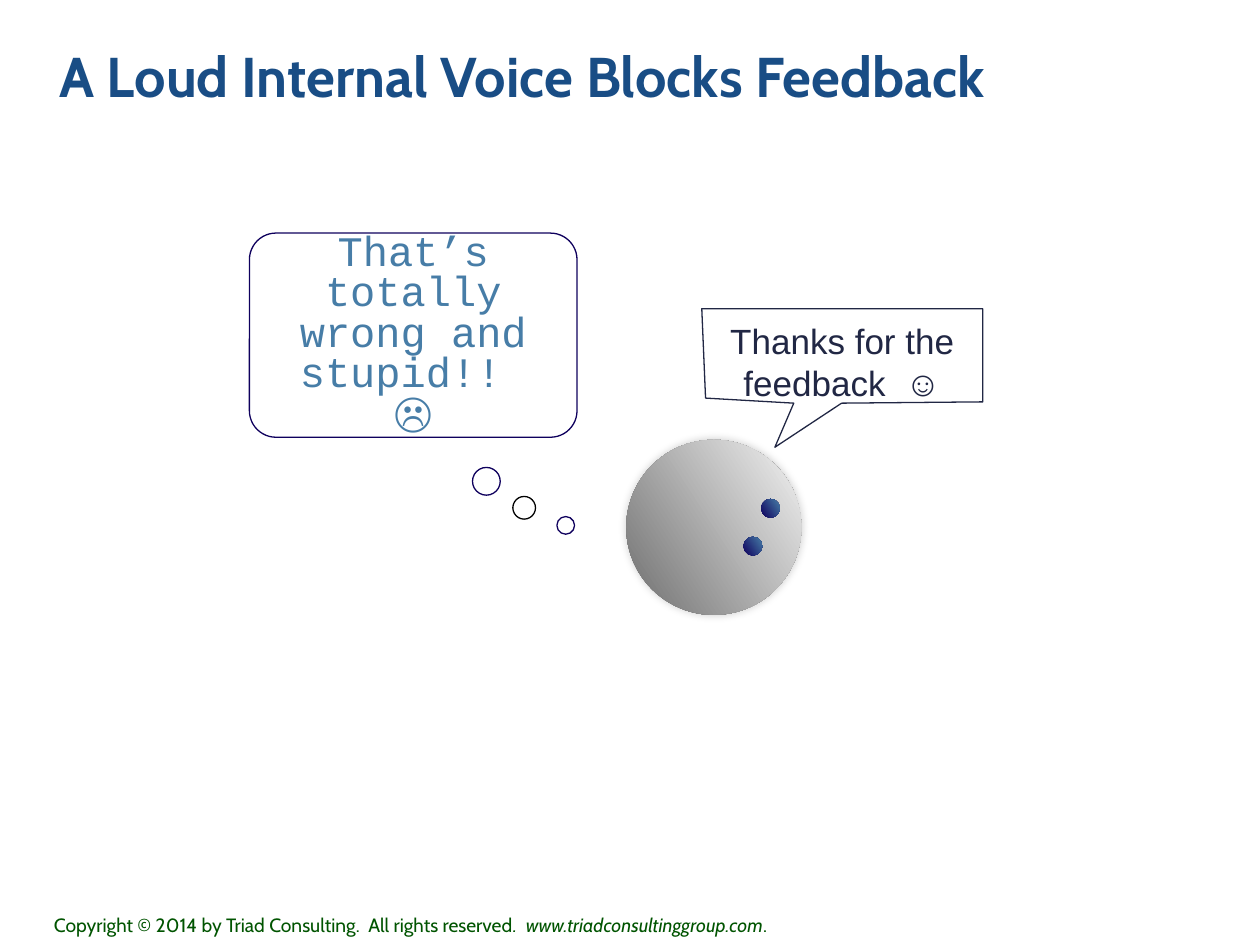
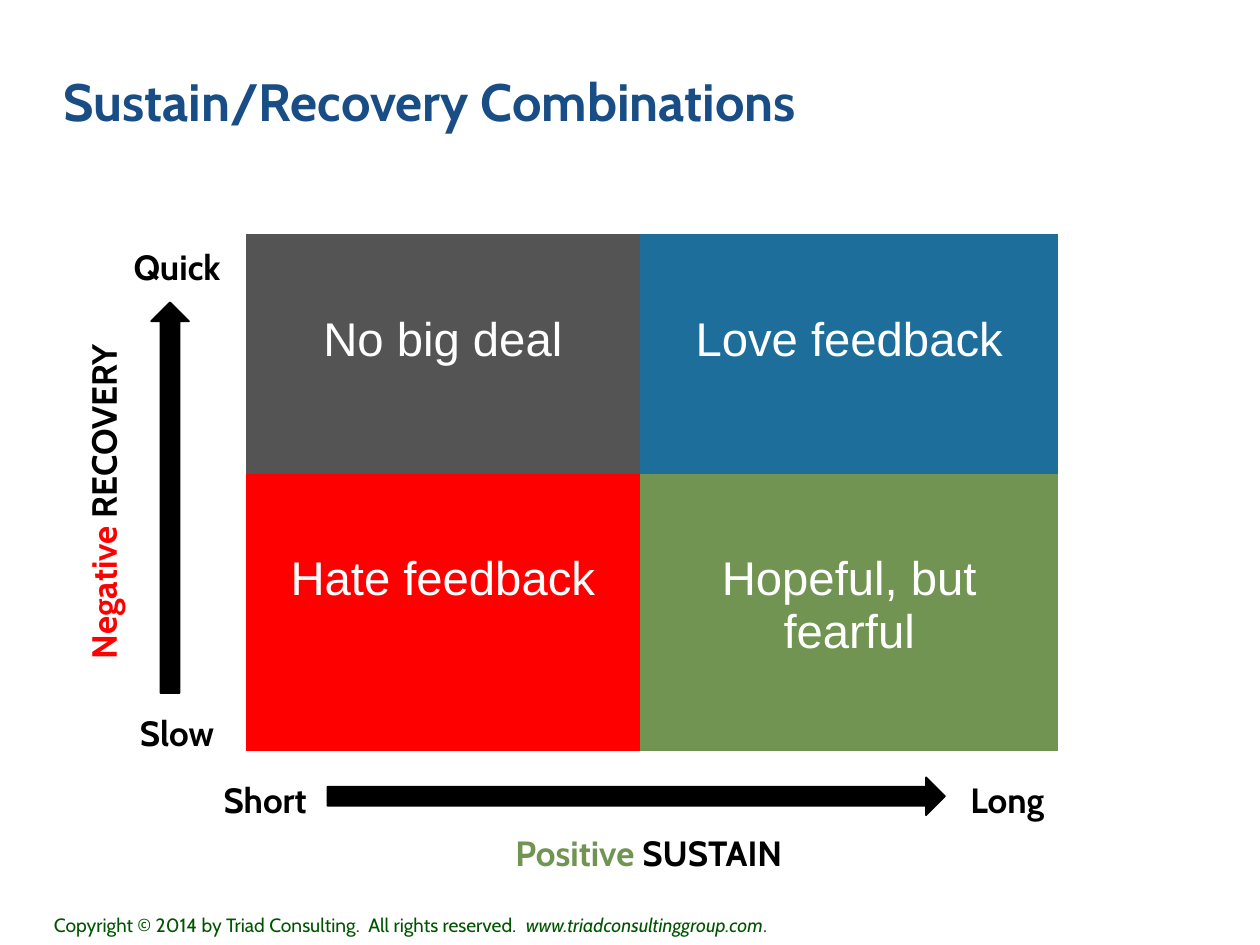
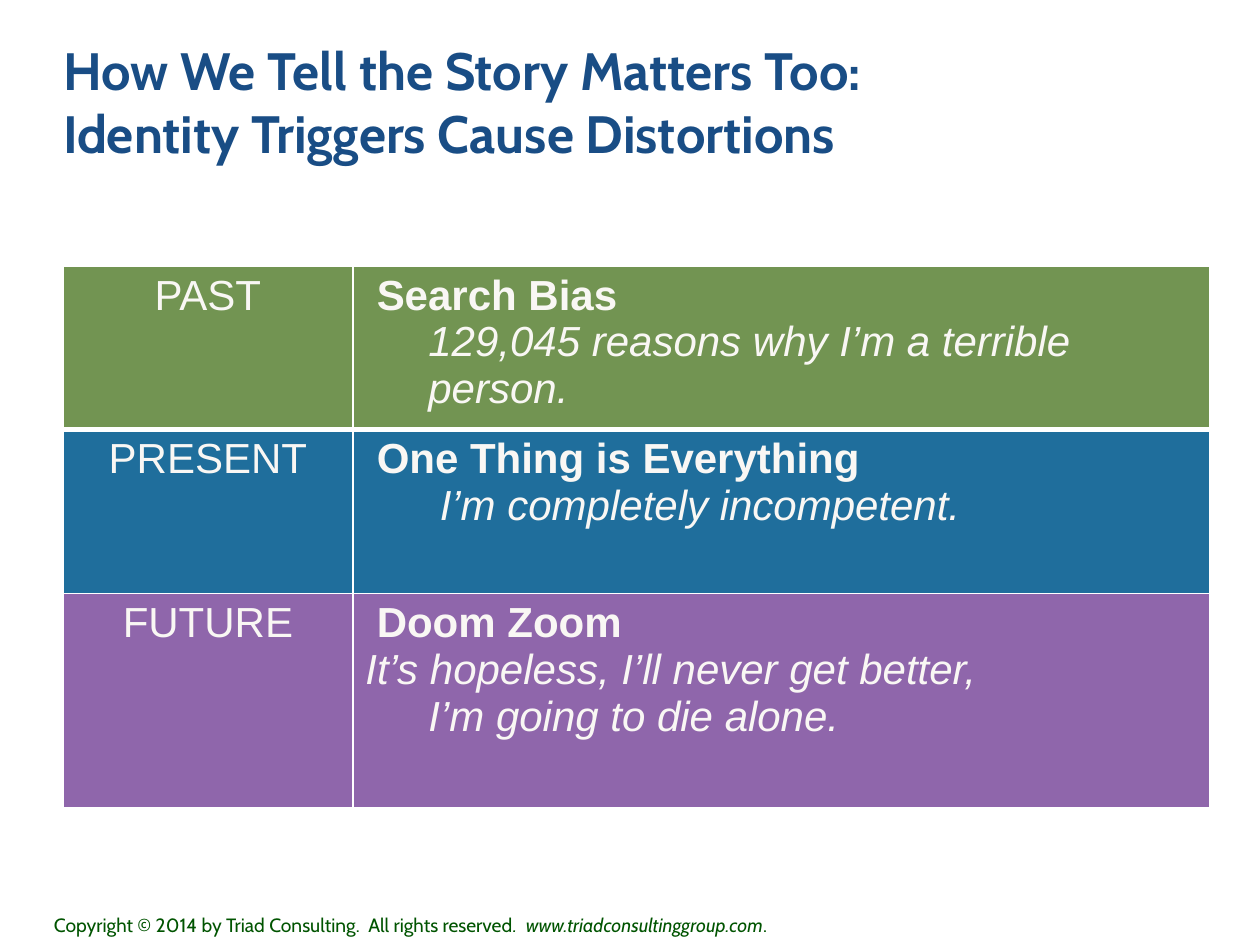
"""Build three slides on how people take in feedback."""
from pptx import Presentation
from pptx import util as u
from pptx.dml.color import RGBColor
from pptx.enum import shapes, text
from pptx.oxml import parse_xml
from pptx.oxml.ns import nsdecls, qn

COLORS = {
    "title": "194D85", "footer": "005400", "black": "000000", "white": "FFFFFF",
    "navy": "0F005D", "sky": "477DA7", "ink": "212744",
    "dark": "6E6E6E", "light": "F3F3F3",
    "gray": "545454", "blue": "1E6E9C", "red": "FF0000", "green": "729452",
    "present": "1F6E9C", "future": "8F66AB", "cream": "F9F7F4",
}
CENTER = text.PP_ALIGN.CENTER
TOP, MIDDLE = text.MSO_ANCHOR.TOP, text.MSO_ANCHOR.MIDDLE
SHAPE = shapes.MSO_SHAPE
NO_STYLE = "{2D5ABB26-0587-4C30-8999-92F81FD0307C}"

FOOTER = [("Copyright © 2014 by Triad Consulting.  All rights reserved", {}),
          (".  www.triadconsultinggroup.com", {"italic": True}), (".", {})]

FACE = (4.97, 3.49, 1.39, 1.39)
EYES = [(5.9, 4.26), (6.04, 3.96)]
EYE_SIZE = 0.15
THOUGHT_DOTS = [(3.75, 3.71, 0.22, "navy"), (4.07, 3.94, 0.18, "black"),
                (4.42, 4.1, 0.14, "navy")]
THOUGHT = "That’s totally wrong and stupid!!  ☹"
SPEECH = "Thanks for the feedback  ☺"
SPEECH_OUTLINE = [(6.15, 3.55), (6.3, 3.2), (5.6, 3.16), (5.57, 2.45),
                  (7.8, 2.45), (7.8, 3.19), (6.68, 3.2)]

QUADRANTS = [[None, ("No big deal", "gray"), ("Love feedback", "blue")],
             [None, ("Hate feedback", "red"), ("Hopeful, but fearful", "green")]]
AXIS_ENDS = [("Slow", 0.9, 5.6), ("Quick", 0.9, 1.9),
             ("Short", 1.6, 6.13), ("Long", 7.49, 6.13)]
AXIS_NAMES = [("Negative", " RECOVERY", "red", (-0.78, 3.76, 3.2, 0.44), 270),
              ("Positive", " SUSTAIN", "green", (3.8, 6.55, 2.7, 0.44), 0)]
AXIS_ARROWS = [((-0.2, 3.8, 3.1, 0.3), 270), ((2.6, 6.17, 4.9, 0.3), 0)]

STORIES = [
    ("PAST", "green", "Search Bias",
     [("129,045 reasons why I’m a terrible person.", 0.5)]),
    ("PRESENT", "present", "One Thing is Everything",
     [("I’m completely incompetent.", 0.59)]),
    ("FUTURE", "future", "Doom Zoom",
     [("It’s hopeless, I’ll never get better,", 0),
      ("I’m going to die alone.", 0.5)]),
]
HEADING_INDENT = 0.09


def rgb(name):
    return RGBColor.from_string(COLORS[name])


def inches(values):
    return [u.Inches(value) for value in values]


def write(para, content, **style):
    """Write a string or (text, overrides) spans into a paragraph."""
    spans = [(content, {})] if isinstance(content, str) else content
    para.alignment = style.get("align")
    para.line_spacing = style.get("spacing")
    if style.get("indent"):
        para._p.get_or_add_pPr().set("marL", str(u.Inches(style["indent"])))
    for words, changes in spans:
        look = {**style, **changes}
        for index, line in enumerate(words.split("\n")):
            if index:
                para.add_line_break()
            span = para.add_run()
            span.text = line
            span.font.name = look.get("font")
            span.font.bold = look.get("bold")
            span.font.italic = look.get("italic")
            if "size" in look:
                span.font.size = u.Pt(look["size"])
            if "color" in look:
                span.font.color.rgb = rgb(look["color"])


def set_frame(frame, margins, anchor):
    frame.word_wrap = True
    frame.auto_size = text.MSO_AUTO_SIZE.NONE
    frame.vertical_anchor = anchor
    (frame.margin_left, frame.margin_top,
     frame.margin_right, frame.margin_bottom) = inches(margins)


def add_label(page, place, content, turn=0, **style):
    box = page.shapes.add_textbox(*inches(place))
    box.rotation = turn
    box.text_frame.word_wrap = True
    write(box.text_frame.paragraphs[0], content, font="Cabin", **style)
    return box


def paint(shape, fill=None, line=None, width=0.75):
    """Fill with a colour, a gradient pair or nothing, and draw the outline."""
    shape.shadow.inherit = False
    if isinstance(fill, tuple):
        shape.fill.gradient()
        shape.fill.gradient_angle = 33
        for stop, name in zip(shape.fill.gradient_stops, fill):
            stop.color.rgb = rgb(name)
    elif fill:
        shape.fill.solid()
        shape.fill.fore_color.rgb = rgb(fill)
    else:
        shape.fill.background()
    if line:
        shape.line.color.rgb = rgb(line)
        shape.line.width = u.Pt(width)
    else:
        shape.line.fill.background()


def add_preset(page, kind, place, **look):
    shape = page.shapes.add_shape(kind, *inches(place))
    paint(shape, **look)
    return shape


def add_grid(page, place, widths, heights):
    frame = page.shapes.add_table(len(heights), len(widths), *inches(place))
    table = frame.table
    table.first_row = table.horz_banding = False
    next(frame.element.iter(qn("a:tableStyleId"))).text = NO_STYLE
    for column, width in zip(table.columns, widths):
        column.width = u.Inches(width)
    for row, height in zip(table.rows, heights):
        row.height = u.Inches(height)
    return table


def fill_cell(cell, color):
    cell.fill.solid()
    cell.fill.fore_color.rgb = rgb(color)


def add_borders(cell, **widths):
    sides = [("L", 1), ("R", 1), ("T", widths["top"]), ("B", widths["bottom"])]
    for index, (side, width) in enumerate(sides):
        cell._tc.get_or_add_tcPr().insert(index, parse_xml(
            f'<a:ln{side} {nsdecls("a")} w="{u.Pt(width)}"><a:solidFill>'
            f'<a:srgbClr val="{COLORS["white"]}"/></a:solidFill></a:ln{side}>'))


def style_layout(layout):
    title = layout.placeholders[0]
    title.left, title.top, title.width, title.height = inches((0.5, 0, 9, 1.6))
    set_frame(title.text_frame, (0, 0, 0, 0), MIDDLE)
    styles = next(title.element.iter(qn("a:lstStyle")))
    styles.append(parse_xml(
        f'<a:lvl1pPr {nsdecls("a")} algn="l"><a:defRPr sz="3000" b="1"><a:solidFill>'
        f'<a:srgbClr val="{COLORS["title"]}"/></a:solidFill>'
        '<a:latin typeface="Cabin"/></a:defRPr></a:lvl1pPr>'))


def add_page(deck, title):
    page = deck.slides.add_slide(deck.slide_layouts[5])
    write(page.shapes.title.text_frame.paragraphs[0], title)
    return page


def share_footer(page):
    box = add_label(page, (0.33, 7.2, 6.53, 0.29), FOOTER, size=11, color="footer")
    page.slide_layout.shapes.element.append(box.element)


def build_voice(deck):
    page = add_page(deck, "A Loud Internal Voice Blocks Feedback")
    share_footer(page)
    title = page.shapes.title
    title.left, title.top, title.width, title.height = inches((0.47, 0.43, 9, 0.7))
    title.text_frame.vertical_anchor = TOP
    heading = title.text_frame.paragraphs[0]
    heading.line_spacing = 0.8
    heading.runs[0].font.size = u.Pt(32)

    face = add_preset(page, SHAPE.OVAL, FACE, fill=("dark", "light"))
    next(face.element.iter(qn("a:effectLst"))).append(parse_xml(
        f'<a:outerShdw {nsdecls("a")} blurRad="{u.Pt(5)}" dist="0" dir="0">'
        f'<a:srgbClr val="{COLORS["black"]}"><a:alpha val="20000"/></a:srgbClr>'
        '</a:outerShdw>'))
    for left, top in EYES:
        add_preset(page, SHAPE.OVAL, (left, top, EYE_SIZE, EYE_SIZE),
                   fill=("navy", "sky"))
    for left, top, size, color in THOUGHT_DOTS:
        add_preset(page, SHAPE.OVAL, (left, top, size, size), line=color)

    thought = add_preset(page, SHAPE.ROUNDED_RECTANGLE, (1.98, 1.85, 2.6, 1.62),
                         line="navy")
    thought.adjustments[0] = 0.13
    set_frame(thought.text_frame, (0.14, 0.14, 0.14, 0.14), MIDDLE)
    write(thought.text_frame.paragraphs[0], THOUGHT, align=CENTER, spacing=0.8,
          font="Courier New", size=24, color="sky")

    start, *corners = [inches(point) for point in SPEECH_OUTLINE]
    outline = page.shapes.build_freeform(*start)
    outline.add_line_segments(corners, close=True)
    speech = outline.convert_to_shape()
    paint(speech, line="ink")
    set_frame(speech.text_frame, (0.14, 0.14, 0.14, 0.4), MIDDLE)
    write(speech.text_frame.paragraphs[0], SPEECH, align=CENTER,
          font="Arial", size=20, color="ink")


def build_combinations(deck):
    page = add_page(deck, "Sustain/Recovery Combinations")
    table = add_grid(page, (-0.2, 1.86, 8.6, 4.1), (2.15, 3.13, 3.32), (1.9, 2.2))
    for row, quadrants in enumerate(QUADRANTS):
        for column, quadrant in enumerate(quadrants):
            if quadrant:
                words, color = quadrant
                cell = table.cell(row, column)
                fill_cell(cell, color)
                cell.margin_top = u.Inches(0.63)
                write(cell.text_frame.paragraphs[0], words, align=CENTER,
                      font="Arial", size=27, color="white")

    label = {"align": CENTER, "size": 20, "bold": True, "color": "black"}
    for words, left, top in AXIS_ENDS:
        add_label(page, (left, top, 1.01, 0.44), words, **label)
    for sign, name, color, place, turn in AXIS_NAMES:
        add_label(page, place, [(sign, {"color": color}), (name, {})], turn, **label)
    for place, turn in AXIS_ARROWS:
        arrow = add_preset(page, SHAPE.RIGHT_ARROW, place,
                           fill="black", line="black", width=1)
        arrow.rotation = turn


def build_stories(deck):
    page = add_page(deck, "How We Tell the Story Matters Too:\n"
                          "Identity Triggers Cause Distortions")
    table = add_grid(page, (0.5, 2.11, 9.1, 4.3), (2.3, 6.8), (1.3, 1.3, 1.7))
    look = {"font": "Arial", "size": 24, "color": "cream"}
    for row, (time, color, heading, thoughts) in enumerate(STORIES):
        time_cell, story_cell = table.cell(row, 0), table.cell(row, 1)
        for cell in (time_cell, story_cell):
            fill_cell(cell, color)
            add_borders(cell, top=3 if row == 1 else 1, bottom=3 if row == 0 else 1)
        write(time_cell.text_frame.paragraphs[0], time, align=CENTER, **look)
        story = story_cell.text_frame
        write(story.paragraphs[0], heading, bold=True, indent=HEADING_INDENT, **look)
        for words, indent in thoughts:
            write(story.add_paragraph(), words, italic=True, indent=indent, **look)


def main():
    deck = Presentation()
    deck.slide_width, deck.slide_height = inches((10, 7.5))
    style_layout(deck.slide_layouts[5])
    build_voice(deck)
    build_combinations(deck)
    build_stories(deck)
    deck.save("out.pptx")


if __name__ == "__main__":
    main()
